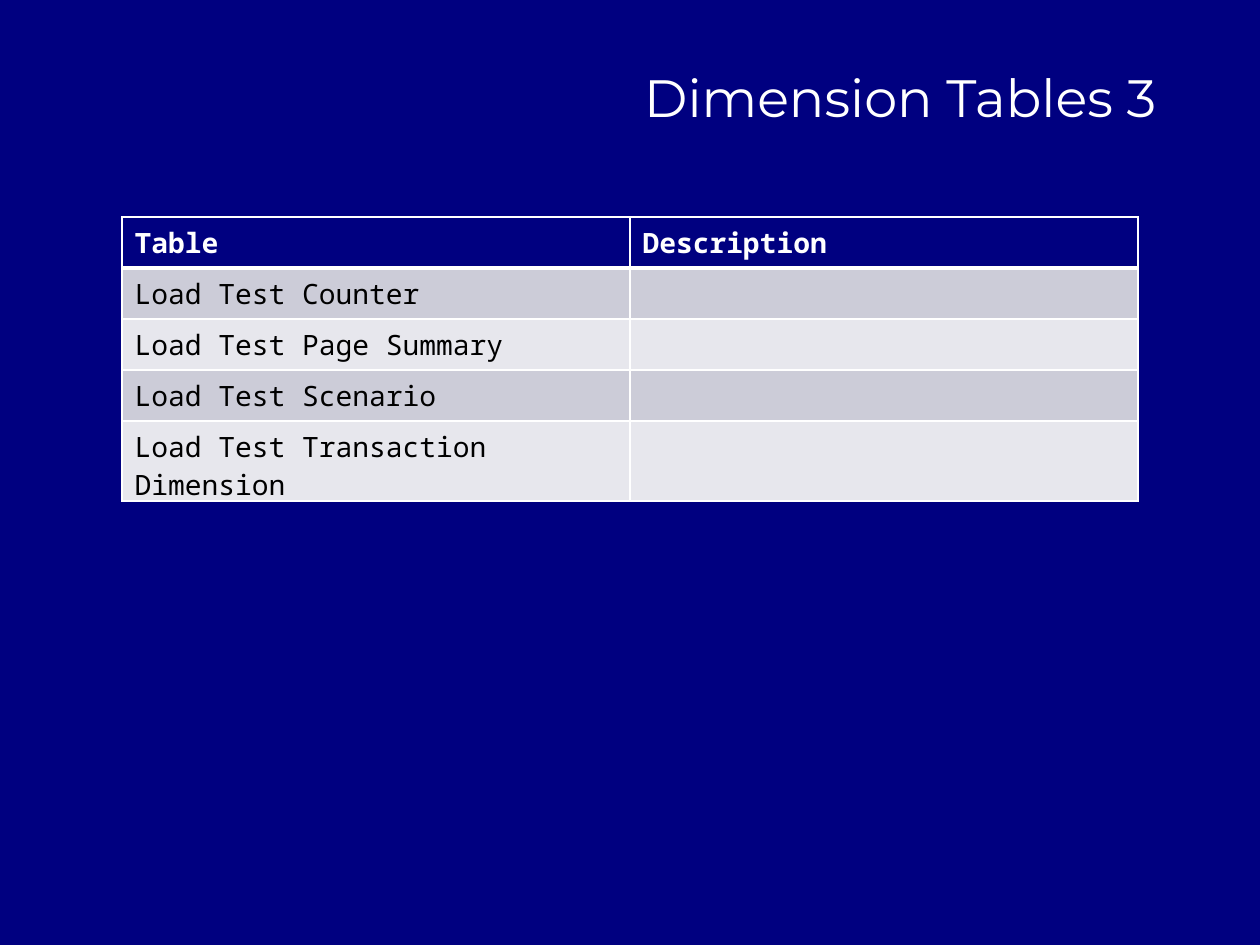
from lxml.etree import SubElement
from pptx import Presentation
from pptx.dml.color import RGBColor
from pptx.enum.text import MSO_ANCHOR as Anchor, PP_ALIGN as Align
from pptx.oxml.ns import qn
from pptx.util import Pt

PX = 914400 / 126
NAVY = RGBColor(0x00, 0x00, 0x80)
WHITE = RGBColor(0xFF, 0xFF, 0xFF)
BLACK = RGBColor(0x00, 0x00, 0x00)
BAND_DARK = RGBColor(0xCC, 0xCC, 0xD8)
BAND_LIGHT = RGBColor(0xE7, 0xE7, 0xED)

ROWS = [
    ("Table", "Description"),
    ("Load Test Counter", ""),
    ("Load Test Page Summary", ""),
    ("Load Test Scenario", ""),
    ("Load Test Transaction Dimension", ""),
]


def px(n):
    return round(n * PX)


class Deck:
    title_font, table_font = "Montserrat", "Noto Sans Mono"
    title_size, table_size = 30, 16

    def __init__(self, prs):
        self.s = prs.slides.add_slide(prs.slide_layouts[6])
        fill = self.s.background.fill
        fill.solid()
        fill.fore_color.rgb = NAVY

    def set_text(self, tf, text, font, size, color, bold=False):
        tf.text = text
        for r in tf.paragraphs[0].runs:
            r.font.name, r.font.size, r.font.bold = font, Pt(size), bold
            r.font.color.rgb = color

    def title(self, text, x, y, w, h):
        tf = self.s.shapes.add_textbox(px(x), px(y), px(w), px(h)).text_frame
        tf.word_wrap = True
        tf.vertical_anchor = Anchor.MIDDLE
        self.set_text(tf, text, self.title_font, self.title_size, WHITE)
        tf.paragraphs[0].alignment = Align.RIGHT

    def border(self, cell, side, width):
        ln = SubElement(cell._tc.get_or_add_tcPr(), qn(f"a:ln{side}"), w=str(Pt(width)))
        SubElement(SubElement(ln, qn("a:solidFill")), qn("a:srgbClr"), val=str(WHITE))

    def table(self, rows, x, y, col_w, row_h):
        n = len(rows[0])
        frame = self.s.shapes.add_table(
            len(rows), n, px(x), px(y), px(col_w * n), px(row_h * len(rows)))
        for i, row in enumerate(rows):
            header = i == 0
            band = NAVY if header else BAND_DARK if i % 2 else BAND_LIGHT
            for j, text in enumerate(row):
                cell = frame.table.cell(i, j)
                self.set_text(cell.text_frame, text, self.table_font, self.table_size,
                              WHITE if header else BLACK, header)
                # A thick rule parts the header from the body
                for side in "LRTB":
                    thick = (i, side) in ((0, "B"), (1, "T"))
                    self.border(cell, side, 3 if thick else 1)
                cell.fill.solid()
                cell.fill.fore_color.rgb = band


def main():
    prs = Presentation()
    prs.slide_width, prs.slide_height = px(1260), px(945)
    deck = Deck(prs)

    # Heading
    deck.title("Dimension Tables 3", 92, 54, 1077, 84)

    # Dimension tables
    deck.table(ROWS, 122, 217, 508, 51)

    prs.save("out.pptx")


if __name__ == "__main__":
    main()
